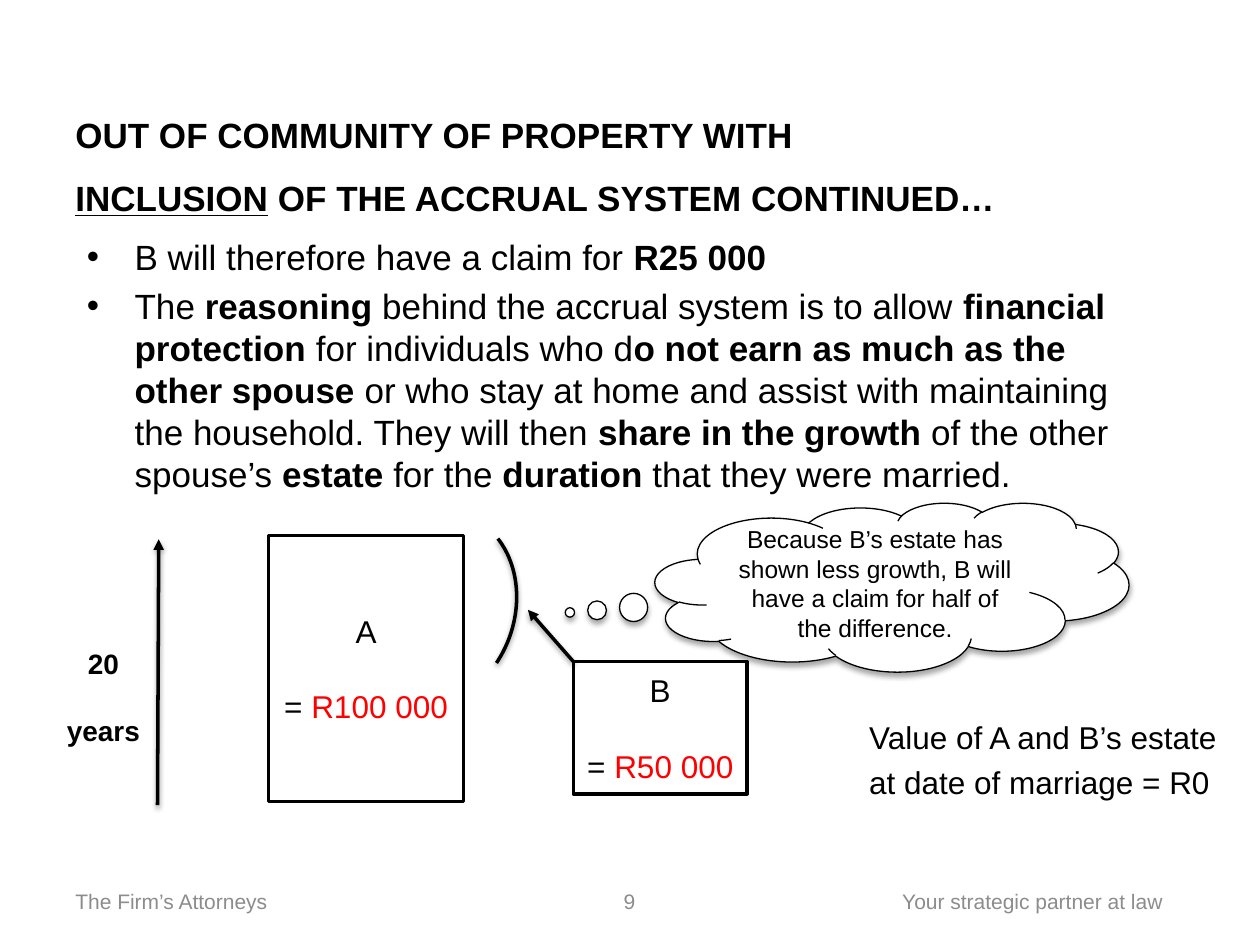
from lxml.etree import SubElement
from pptx import Presentation
from pptx.dml.color import RGBColor
from pptx.enum.shapes import MSO_CONNECTOR, MSO_SHAPE
from pptx.enum.text import MSO_ANCHOR, MSO_AUTO_SIZE, PP_ALIGN
from pptx.oxml.ns import qn
from pptx.util import Inches, Pt

COLORS = {"ink": "000000", "amount": "FF0000", "footer": "8C8C8C", "cloud": "FFFFFF"}
COLUMNS, ROWS = 100, 75
WIDTH, HEIGHT = Inches(10), Inches(7.5)
BLANK_LINE = 1.2  # height of a skipped line, in text sizes

# A paragraph is a list of (text, font values); boxes are column, row, columns, rows.
BOLD, UNDERLINED, AMOUNT = {"bold": True}, {"bold": True, "underline": True}, {"color": "amount"}
FOOTERS = [
    ("The Firm’s Attorneys", (5, 69.5, 23.3, 4), PP_ALIGN.LEFT),
    ("Your strategic partner at law", (68.9, 69.5, 26.1, 4), PP_ALIGN.CENTER),
    ("9", (38.3, 69.5, 23.3, 4), PP_ALIGN.CENTER),
]
TITLE = [
    [("OUT OF COMMUNITY OF PROPERTY WITH", BOLD)],
    [("INCLUSION", UNDERLINED), (" OF THE ACCRUAL SYSTEM CONTINUED…", BOLD)],
]
BULLETS = [
    [("B will therefore have a claim for ", {}), ("R25 000", BOLD)],
    [
        ("The ", {}), ("reasoning", BOLD),
        (" behind the accrual system is to allow ", {}), ("financial protection ", BOLD),
        ("for individuals who d", {}), ("o not earn as much as the other spouse ", BOLD),
        ("or who stay at home and assist with maintaining the household. They will then ", {}),
        ("share in the growth ", BOLD), ("of the other spouse’s ", {}), ("estate", BOLD),
        (" for the ", {}), ("duration", BOLD), (" that they were married.", {}),
    ],
]
STARTING_VALUE = [[("Value of A and B’s estate", {})], [("at date of marriage = R0", {})]]
ESTATES = [
    ("A", "R100 000", (21.3, 42.5, 15.5, 21.1)),
    ("B", "R50 000", (45.5, 52.5, 13.8, 10.5)),
]
PERIOD = [[("20", BOLD)], [("years", BOLD)]]
CLAIM = [[("Because B’s estate has shown less growth, B will have a claim "
           "for half of the difference.", {})]]
TIME_ARROW = (12.5, 63.9, 12.6, 42.8)
DIFFERENCE_ARROW = (45.5, 52.5, 41.9, 48.4)
LINE_SHADOW = {"alpha": 38, "blur": 3.1, "distance": 1.6}
CLOUD_SHADOW = {"alpha": 35, "blur": 3.1, "distance": 1.8}


def place(lengths):
    """Turn alternating columns and rows into slide lengths."""
    steps = (WIDTH / COLUMNS, HEIGHT / ROWS)
    return [round(length * steps[i % 2]) for i, length in enumerate(lengths)]


def color(name):
    return RGBColor.from_string(COLORS[name])


def add_bullet(paragraph, indent):
    properties = paragraph._p.get_or_add_pPr()
    properties.set("marL", str(indent))
    properties.set("indent", str(-indent))
    SubElement(properties, qn("a:buFont"), typeface="Arial")
    SubElement(properties, qn("a:buChar"), char="•")


def write(shape, paragraphs, size, ink="ink", frame_values=None, bullet=None, gap=0, **values):
    """Fill a shape with text; values go to each paragraph, gap goes between them."""
    frame = shape.text_frame
    frame.word_wrap = True
    for name, value in (frame_values or {}).items():
        setattr(frame, name, value)
    for index, runs in enumerate(paragraphs):
        paragraph = frame.add_paragraph() if index else frame.paragraphs[0]
        if bullet:
            add_bullet(paragraph, bullet)
        for name, value in values.items():
            setattr(paragraph, name, value)
        if index and gap:
            paragraph.space_before = Pt(gap)
        for text, font_values in runs:
            run = paragraph.add_run()
            run.text = text
            font_settings = {"name": "Arial", "size": Pt(size), "bold": False, **font_values}
            run.font.color.rgb = color(font_settings.pop("color", ink))
            for name, value in font_settings.items():
                setattr(run.font, name, value)


def add_text(slide, box, paragraphs, size, **options):
    write(slide.shapes.add_textbox(*place(box)), paragraphs, size, **options)


def add_shadow(properties, alpha, blur, distance):
    effects = properties.find(qn("a:effectLst"))
    if effects is None:
        effects = SubElement(properties, qn("a:effectLst"))
    shadow = SubElement(effects, qn("a:outerShdw"), blurRad=str(Pt(blur)),
                        dist=str(Pt(distance)), dir="5400000", rotWithShape="0")
    ink = SubElement(shadow, qn("a:srgbClr"), val=COLORS["ink"])
    SubElement(ink, qn("a:alpha"), val=str(alpha * 1000))


def outline(shape, width):
    shape.line.color.rgb = color("ink")
    shape.line.width = Pt(width)


def add_outlined(slide, kind, box, width=2, fill=None, shadow=None, adjustments=()):
    shape = slide.shapes.add_shape(kind, *place(box))
    shape.shadow.inherit = False
    outline(shape, width)
    if fill:
        shape.fill.solid()
        shape.fill.fore_color.rgb = color(fill)
    else:
        shape.fill.background()
    for index, value in enumerate(adjustments):
        shape.adjustments[index] = value
    if shadow:
        add_shadow(shape._element.spPr, **shadow)
    return shape


def add_arrow(slide, ends):
    arrow = slide.shapes.add_connector(MSO_CONNECTOR.STRAIGHT, *place(ends))
    outline(arrow, 2)
    SubElement(arrow.line._get_or_add_ln(), qn("a:tailEnd"), type="triangle")
    add_shadow(arrow._element.spPr, **LINE_SHADOW)


def main():
    presentation = Presentation()
    presentation.slide_width, presentation.slide_height = WIDTH, HEIGHT
    slide = presentation.slides.add_slide(presentation.slide_layouts[6])
    middle = {"vertical_anchor": MSO_ANCHOR.MIDDLE}
    grow = {"auto_size": MSO_AUTO_SIZE.SHAPE_TO_FIT_TEXT}
    center = PP_ALIGN.CENTER

    for text, box, alignment in FOOTERS:
        add_text(slide, box, [[(text, {})]], 12, ink="footer",
                 frame_values=middle, alignment=alignment)
    add_text(slide, (5, 7.8, 77, 9.1), TITLE, 20, frame_values=middle, line_spacing=1.5)
    add_text(slide, (5.9, 18.2, 86.9, 10.5), BULLETS, 20, bullet=Inches(0.38), gap=4)
    add_text(slide, (68, 55.9, 30.7, 7.9), STARTING_VALUE, 18,
             frame_values=grow, line_spacing=1.2)
    for owner, amount, box in ESTATES:
        estate = add_outlined(slide, MSO_SHAPE.RECTANGLE, box)
        write(estate, [[(owner, {})], [("= ", {}), (amount, AMOUNT)]], 18,
              frame_values=middle, gap=18 * BLANK_LINE, alignment=center)
    add_arrow(slide, TIME_ARROW)
    add_text(slide, (3.8, 50.8, 8.8, 9.1), PERIOD, 16, frame_values=grow,
             gap=16 * BLANK_LINE, alignment=center)
    bracket = add_outlined(slide, MSO_SHAPE.ARC, (27.6, 40.4, 13.2, 16),
                           shadow=LINE_SHADOW, adjustments=(175.04, 10.54))
    bracket.rotation = 21.5
    add_arrow(slide, DIFFERENCE_ARROW)
    cloud = add_outlined(slide, MSO_SHAPE.CLOUD_CALLOUT, (52, 39.9, 37.6, 13.4), 0.75,
                         "cloud", CLOUD_SHADOW, (-0.68, 0.15))
    write(cloud, CLAIM, 14, frame_values=middle, alignment=center)
    presentation.save("out.pptx")


if __name__ == "__main__":
    main()
